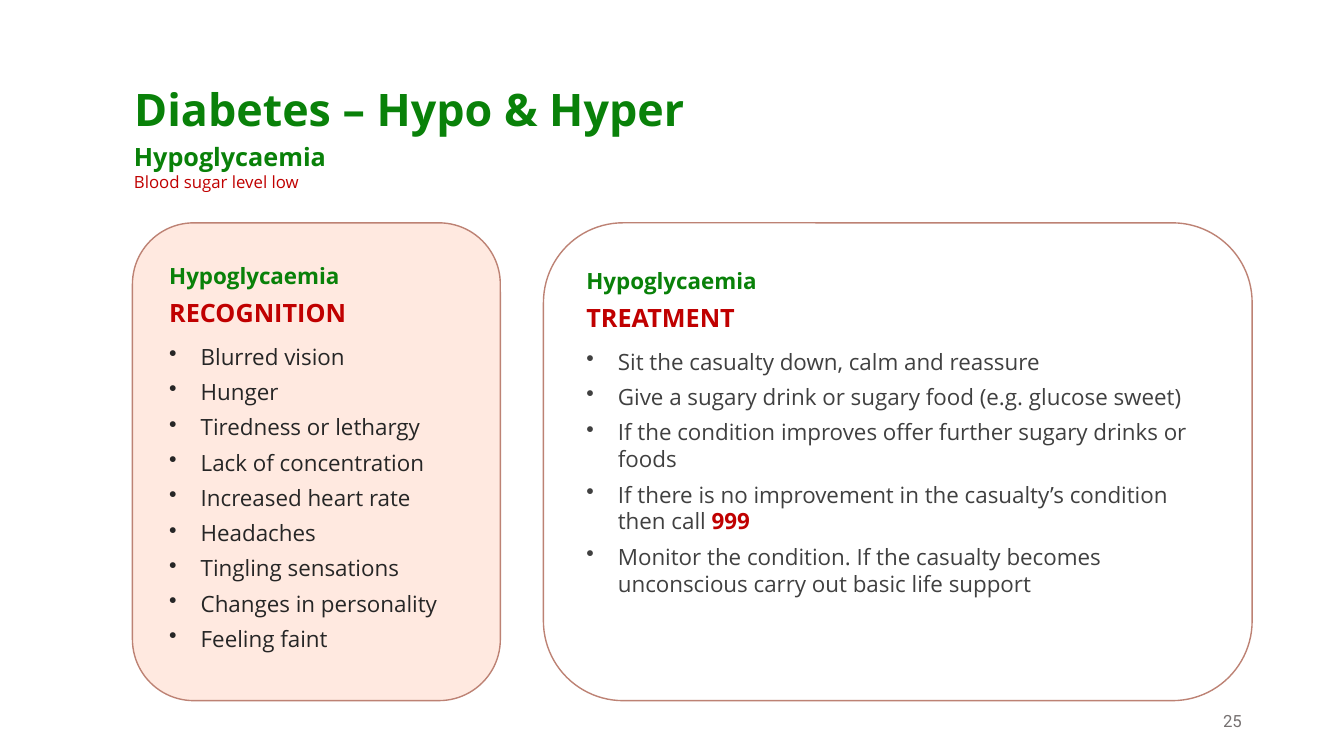
from lxml import etree
from pptx import Presentation
from pptx.dml.color import RGBColor
from pptx.enum.shapes import MSO_SHAPE
from pptx.enum.text import MSO_ANCHOR, PP_ALIGN
from pptx.oxml.ns import qn
from pptx.util import Pt

ROUND = MSO_SHAPE.ROUNDED_RECTANGLE
TOP, MIDDLE = MSO_ANCHOR.TOP, MSO_ANCHOR.MIDDLE
LEFT, RIGHT = PP_ALIGN.LEFT, PP_ALIGN.RIGHT
COLORS = {
    "green": "098109", "red": "C00000", "peach": "FFE9E0", "white": "FFFFFF",
    "border": "BD8274", "dark": "262626", "gray": "404040", "page": "767171",
}
SIGNS = [
    "Blurred vision", "Hunger", "Tiredness or lethargy",
    "Lack of concentration", "Increased heart rate", "Headaches",
    "Tingling sensations", "Changes in personality", "Feeling faint",
]
STEPS = [
    "Sit the casualty down, calm and reassure",
    "Give a sugary drink or sugary food (e.g. glucose sweet)",
    "If the condition improves offer further sugary drinks or foods",
    "If there is no improvement in the casualty’s condition then call *999",
    "Monitor the condition. If the casualty becomes "
    "unconscious carry out basic life support",
]


def rgb(name):
    return RGBColor.from_string(COLORS[name])


class Deck:
    font = "Open Sans"
    indent = 22.5

    def __init__(self, slide):
        self.slide = slide

    def title(self, text, box):
        shape = self.slide.shapes.title
        shape.left, shape.top, shape.width, shape.height = map(Pt, box)
        self.line(self.frame(shape), text, 32, "green", True)

    def frame(self, shape, anchor=TOP):
        frame = shape.text_frame
        frame.word_wrap = True
        frame.vertical_anchor = anchor
        return frame

    def text(self, box, anchor=TOP):
        return self.frame(self.slide.shapes.add_textbox(*map(Pt, box)), anchor)

    def line(self, frame, text, size, color, bold=False, after=0,
             align=LEFT, font=font):
        """Write a paragraph; words after an asterisk are bold red."""
        first = frame.paragraphs[0]
        para = frame.add_paragraph() if first.runs else first
        plain, _, strong = text.partition("*")
        para.add_run().text = plain
        para.alignment = align
        para.space_before, para.space_after = Pt(0), Pt(after)
        style = para.font
        style.name, style.size, style.bold = font, Pt(size), bold
        style.color.rgb = rgb(color)
        if strong:
            run = para.add_run()
            run.text = strong
            run.font.bold = True
            run.font.color.rgb = rgb("red")
        return para

    def bullet(self, frame, text, color):
        para = self.line(frame, text, 16, color, after=6)
        props = para._p.get_or_add_pPr()
        props.set("marL", str(Pt(self.indent)))
        props.set("indent", str(-Pt(self.indent)))
        mark = etree.Element(qn("a:buChar"), char="•")
        props.insert_element_before(mark, "a:tabLst", "a:defRPr", "a:extLst")

    def panel(self, box, fill):
        shape = self.slide.shapes.add_shape(ROUND, *map(Pt, box))
        shape.shadow.inherit = False
        shape.fill.solid()
        shape.fill.fore_color.rgb = rgb(fill)
        shape.line.color.rgb = rgb("border")
        shape.line.width = Pt(1)

    def card(self, box, fill, inner, head, items, color):
        self.panel(box, fill)
        frame = self.text(inner)
        self.line(frame, "Hypoglycaemia", 16, "green", True, 6)
        self.line(frame, head, 18, "red", True, 11)
        for item in items:
            self.bullet(frame, item, color)


def main():
    prs = Presentation()
    prs.slide_width, prs.slide_height = Pt(960), Pt(540)
    deck = Deck(prs.slides.add_slide(prs.slide_layouts[5]))

    deck.title("Diabetes – Hypo & Hyper", (88.6, 54.7, 427.7, 46))
    sub = deck.text((88.6, 97.2, 797, 44))
    deck.line(sub, "Hypoglycaemia", 18, "green", True)
    deck.line(sub, "Blood sugar level low", 12, "red")

    deck.card((94.6, 159.2, 262.8, 341.3), "peach",
              (113.8, 183.6, 228.2, 288.7), "RECOGNITION", SIGNS, "dark")
    deck.card((388.2, 159.2, 506.2, 341.3), "white",
              (411.8, 187.2, 457.9, 244.8), "TREATMENT", STEPS, "gray")

    page = deck.text((678.2, 500.4, 216, 28.8), MIDDLE)
    deck.line(page, "25", 12, "page", align=RIGHT, font="Roboto")
    prs.save("out.pptx")


if __name__ == "__main__":
    main()
